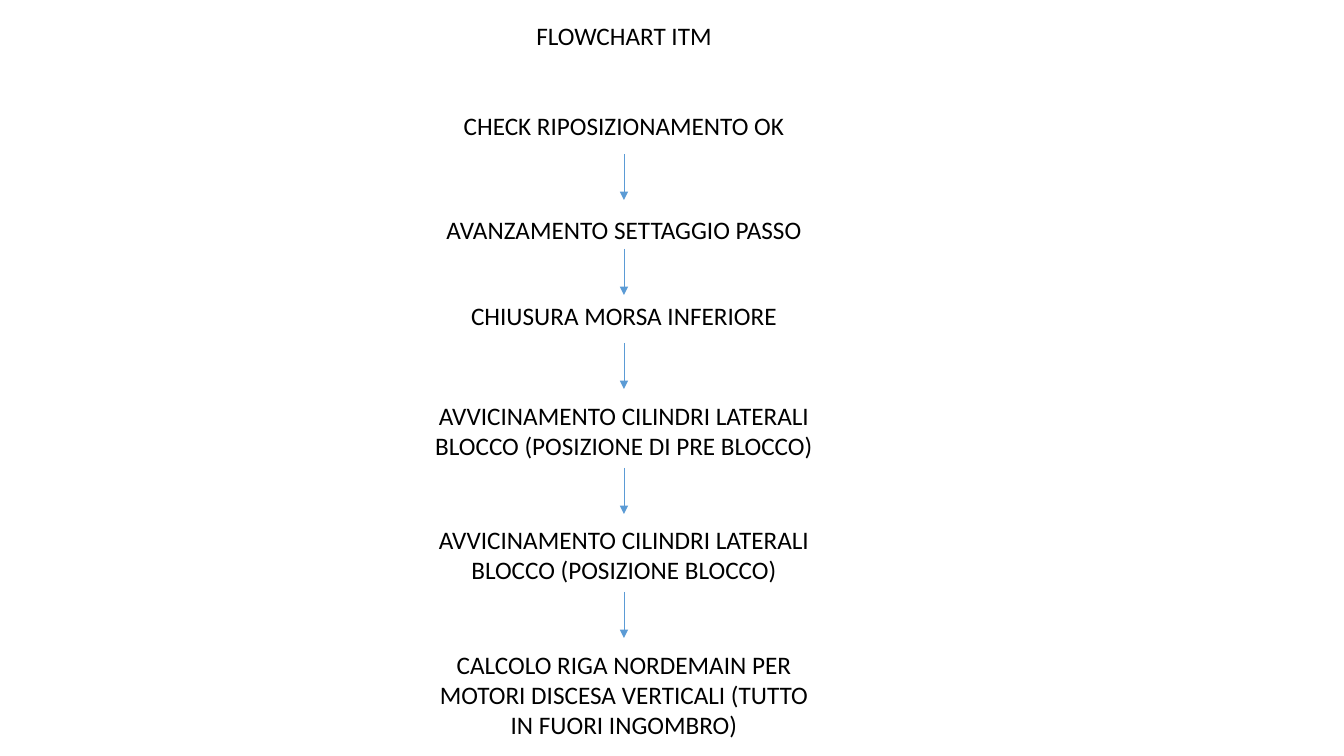
from pptx import Presentation
from pptx.dml.color import RGBColor
from pptx.enum.shapes import MSO_CONNECTOR
from pptx.enum.text import MSO_ANCHOR, MSO_AUTO_SIZE, PP_ALIGN
from pptx.oxml.ns import qn
from pptx.util import Pt
from lxml import etree

STRAIGHT = MSO_CONNECTOR.STRAIGHT
TOP, MIDDLE = MSO_ANCHOR.TOP, MSO_ANCHOR.MIDDLE
GROW = MSO_AUTO_SIZE.SHAPE_TO_FIT_TEXT
CENTER = PP_ALIGN.CENTER
BOTTOM_SITE, TOP_SITE = 2, 0

# Content
TITLE = "FLOWCHART ITM"
# text, top, width, number of lines, start of the arrow below (px)
STEPS = [
    ("CHECK RIPOSIZIONAMENTO OK", 105, 374, 1, 154),
    ("AVANZAMENTO SETTAGGIO PASSO", 209, 412, 1, 249),
    ("CHIUSURA MORSA INFERIORE", 295, 412, 1, 343),
    ("AVVICINAMENTO CILINDRI LATERALI BLOCCO (POSIZIONE DI PRE BLOCCO)",
     395, 412, 2, 468),
    ("AVVICINAMENTO CILINDRI LATERALI BLOCCO (POSIZIONE BLOCCO)",
     519, 412, 2, 592),
    ("CALCOLO RIGA NORDEMAIN PER MOTORI DISCESA VERTICALI (TUTTO IN FUORI INGOMBRO)",
     644, 412, 3, None),
]
COLORS = {"text": "000000", "arrow": "5B9BD5"}
FONT = "Calibri"

# Layout in px
SLIDE_W, SLIDE_H = 1344, 756
AXIS = 624
TITLE_TOP, TITLE_W = 15, 290
LINE_H, PADDING = 31, 9
ARROW_LENGTH = 46


def px(length):
    return round(length * 914400 / 100.8)


def write(holder, text, size=18, color="text", anchor=TOP):
    frame = holder.text_frame
    frame.word_wrap = True
    frame.auto_size = GROW
    frame.vertical_anchor = anchor
    paragraph = frame.paragraphs[0]
    paragraph.alignment = CENTER
    run = paragraph.add_run()
    run.text = text
    run.font.name = FONT
    run.font.size = Pt(size)
    run.font.color.rgb = RGBColor.from_string(COLORS[color])


def box(top, width, lines):
    height = LINE_H * lines + PADDING
    return [px(v) for v in (AXIS - width / 2, top, width, height)]


def add_arrow(slide, start):
    ends = [px(v) for v in (AXIS, start, AXIS, start + ARROW_LENGTH)]
    arrow = slide.shapes.add_connector(STRAIGHT, *ends)
    arrow.line.color.rgb = RGBColor.from_string(COLORS["arrow"])
    arrow.line.width = Pt(0.5)
    properties = arrow.line._get_or_add_ln()
    etree.SubElement(properties, qn("a:tailEnd"), type="triangle")
    etree.SubElement(properties.getparent(), qn("a:effectLst"))
    return arrow


def main():
    deck = Presentation()
    deck.slide_width, deck.slide_height = px(SLIDE_W), px(SLIDE_H)
    slide = deck.slides.add_slide(deck.slide_layouts[5])

    # Title
    title = slide.shapes.title
    title.left, title.top, title.width, title.height = box(TITLE_TOP, TITLE_W, 1)
    write(title, TITLE, anchor=MIDDLE)

    # Steps
    steps = []
    for text, top, width, lines, _ in STEPS:
        step = slide.shapes.add_textbox(*box(top, width, lines))
        write(step, text)
        steps.append(step)

    # Arrows, joined to the steps that they touch
    for (*_, start), step, following in zip(STEPS, steps, steps[1:]):
        arrow = add_arrow(slide, start)
        if abs(arrow.begin_y - step.top - step.height) <= px(2):
            arrow.begin_connect(step, BOTTOM_SITE)
        if abs(arrow.end_y - following.top) <= px(2):
            arrow.end_connect(following, TOP_SITE)

    deck.save("out.pptx")


if __name__ == "__main__":
    main()
